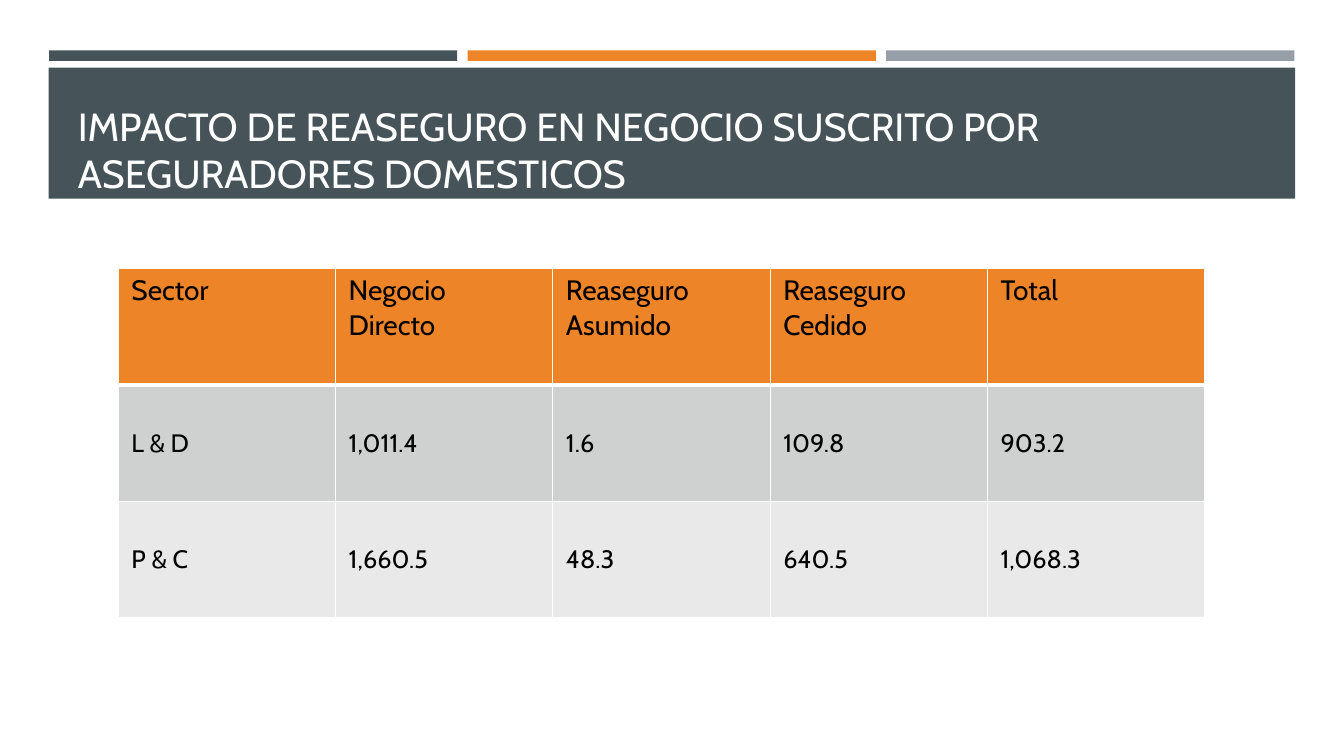
import pptx
import pptx.dml.color
import pptx.enum.shapes
import pptx.enum.text
import pptx.oxml
import pptx.oxml.ns
import pptx.util

Pt = pptx.util.Pt
SLATE, ORANGE, GREY, WHITE, BLACK = "465359", "ED8428", "969FA7", "FFFFFF", "000000"


def paint(fill, color):
    fill.solid()
    fill.fore_color.rgb = pptx.dml.color.RGBColor.from_string(color)


def add_run(paragraph, text, size, color):
    run = paragraph.add_run()
    run.text = text
    run.font.name = "Cabin"
    run.font.size = Pt(size)
    run.font.bold = False
    paint(run.font.fill, color)


presentation = pptx.Presentation()
presentation.slide_width = Pt(960)
presentation.slide_height = Pt(540)
slide = presentation.slides.add_slide(presentation.slide_layouts[5])

# Three accent strips above the title band
bands = [(35 + 299 * i, 36, 291.6, 7.5, color)
         for i, color in enumerate((SLATE, ORANGE, GREY))]
bands.append((34.7, 48.4, 890.4, 93.6, SLATE))
for left, top, width, height, color in bands:
    band = slide.shapes.add_shape(
        pptx.enum.shapes.MSO_SHAPE.RECTANGLE, Pt(left), Pt(top), Pt(width), Pt(height))
    band.shadow.inherit = False
    paint(band.fill, color)
    band.line.fill.background()

# Title, brought in front of its band
title = slide.shapes.title
title.element.getparent().append(title.element)
title.left, title.top, title.width, title.height = Pt(48.4), Pt(21.6), Pt(864), Pt(122.4)
title.text_frame.word_wrap = True
title.text_frame.auto_size = pptx.enum.text.MSO_AUTO_SIZE.NONE
title.text_frame.vertical_anchor = pptx.enum.text.MSO_ANCHOR.BOTTOM
heading = title.text_frame.paragraphs[0]
heading.alignment = pptx.enum.text.PP_ALIGN.LEFT
add_run(heading, "IMPACTO DE REASEGURO EN NEGOCIO SUSCRITO POR ASEGURADORES DOMESTICOS", 28, WHITE)

# Reinsurance table
rows = [
    ["Sector", "Negocio\nDirecto", "Reaseguro\nAsumido", "Reaseguro\nCedido", "Total"],
    ["L & D", "1,011.4", "1.6", "109.8", "903.2"],
    ["P & C", "1,660.5", "48.3", "640.5", "1,068.3"],
]
row_fills = [ORANGE, "CFD1D1", "E9E9EA"]
table = slide.shapes.add_table(
    len(rows), len(rows[0]), Pt(84.5), Pt(192), Pt(776), Pt(249)).table
table.first_row = False
table.horz_banding = False

for r, (values, row_fill) in enumerate(zip(rows, row_fills)):
    is_header = r == 0
    border_widths = {"L": 1, "R": 1, "T": 3 if r == 1 else 1, "B": 3 if is_header else 1}
    for c, value in enumerate(values):
        cell = table.cell(r, c)
        cell.margin_left = cell.margin_right = Pt(9.4)
        cell.margin_top = cell.margin_bottom = Pt(3.6)
        cell.vertical_anchor = (pptx.enum.text.MSO_ANCHOR.TOP if is_header
                                else pptx.enum.text.MSO_ANCHOR.MIDDLE)
        properties = cell._tc.get_or_add_tcPr()
        for side, width in border_widths.items():
            properties.append(pptx.oxml.parse_xml(
                f'<a:ln{side} {pptx.oxml.ns.nsdecls("a")} w="{Pt(width)}">'
                f'<a:solidFill><a:srgbClr val="{WHITE}"/></a:solidFill></a:ln{side}>'))
        paint(cell.fill, row_fill)
        for i, line in enumerate(value.split("\n")):
            frame = cell.text_frame
            paragraph = frame.add_paragraph() if i else frame.paragraphs[0]
            add_run(paragraph, line, 20 if is_header else 18, BLACK)

presentation.save("out.pptx")
